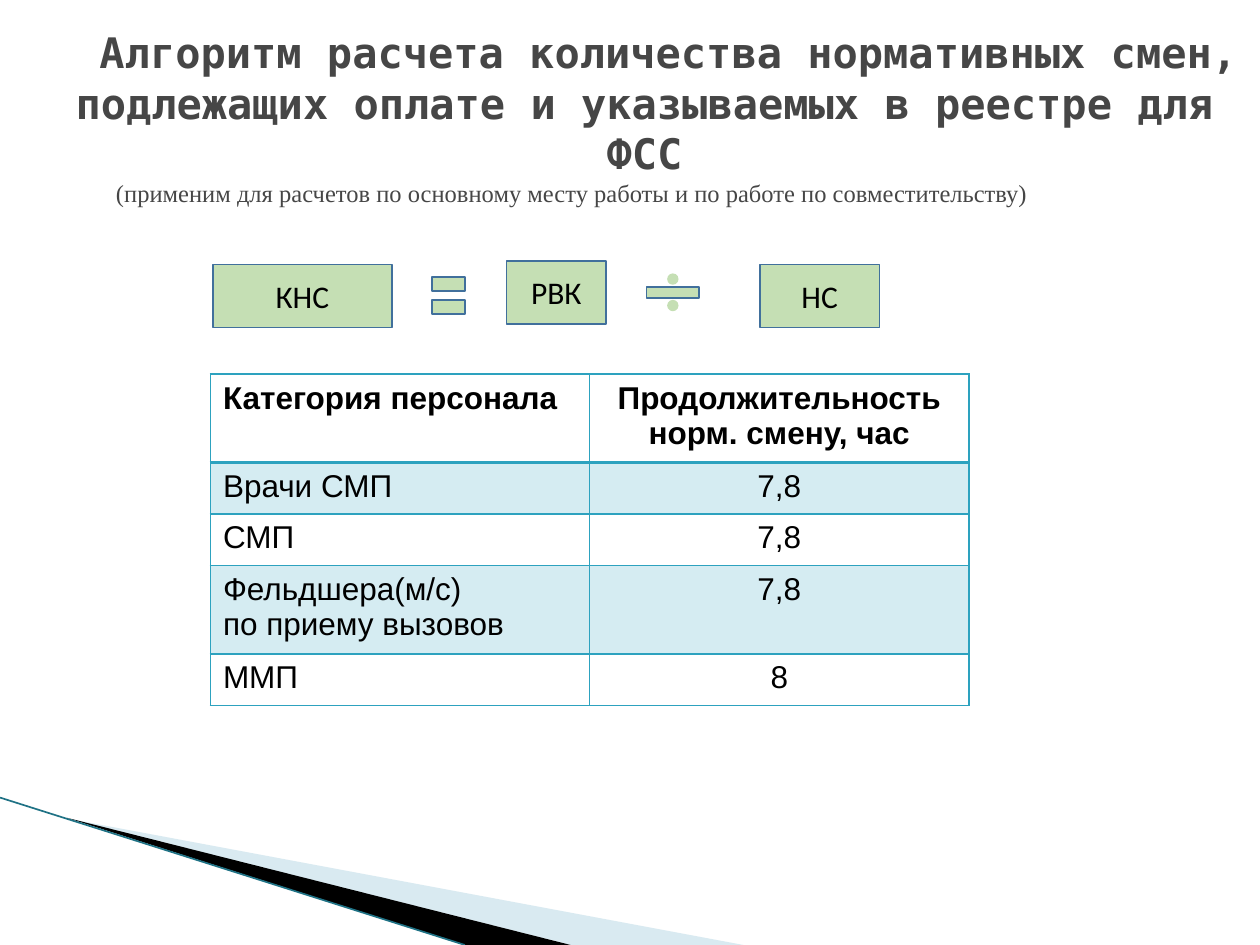
from lxml.etree import SubElement
from pptx import Presentation
from pptx.dml.color import RGBColor
from pptx.enum.shapes import MSO_CONNECTOR, MSO_SHAPE as SHAPE
from pptx.enum.text import MSO_ANCHOR as ANCHOR, MSO_AUTO_SIZE, PP_ALIGN as ALIGN
from pptx.oxml.ns import qn
from pptx.util import Inches, Pt

GREEN, BLUE, TEAL = "C5DFB4", "41709C", "2DA2BF"


def rgb(value):
    """Turn a hex string into a colour."""
    return RGBColor.from_string(value)


def paint(part, properties, color, opacity=100):
    """Fill a shape or cell with a colour of the given opacity in percent."""
    part.fill.solid()
    part.fill.fore_color.rgb = rgb(color)
    if opacity < 100:
        tint = properties.find(qn("a:solidFill")).find(qn("a:srgbClr"))
        SubElement(tint, qn("a:alpha"), val=str(opacity * 1000))


def style(paragraph, font, size, color="000000", bold=False, align=ALIGN.LEFT):
    """Format a paragraph and its runs."""
    paragraph.alignment = align
    for run in paragraph.runs:
        run.font.name, run.font.size, run.font.bold = font, Pt(size), bold
        run.font.color.rgb = rgb(color)


def indent(paragraph, left, first):
    """Set the left margin and first-line indent in inches."""
    properties = paragraph._p.get_or_add_pPr()
    properties.set("marL", str(Inches(left)))
    properties.set("indent", str(Inches(first)))


def add_block(slide, kind, left, top, width, height, outlined=True):
    """Add a green preset shape with an optional outline."""
    block = slide.shapes.add_shape(
        kind, Inches(left), Inches(top), Inches(width), Inches(height))
    block.shadow.inherit = False
    paint(block, block._element.spPr, GREEN)
    if outlined:
        block.line.color.rgb = rgb(BLUE)
        block.line.width = Pt(0.96)
    else:
        block.line.fill.background()
    return block


def add_term(slide, label, left, top, width, height):
    """Add a labelled term of the formula."""
    frame = add_block(slide, SHAPE.RECTANGLE, left, top, width, height).text_frame
    frame.margin_left = frame.margin_right = frame.margin_top = frame.margin_bottom = 0
    frame.vertical_anchor = ANCHOR.MIDDLE
    frame.text = label
    style(frame.paragraphs[0], "Calibri", 18, align=ALIGN.CENTER)


def add_equals(slide, left, top, width, height):
    """Add an equals sign made of two bars."""
    bar = 0.11
    for bar_top in (top, top + height - bar):
        add_block(slide, SHAPE.RECTANGLE, left, bar_top, width, bar)


def add_divide(slide, left, top, width, height):
    """Add a division sign made of two dots and a bar."""
    unit = 0.09
    for dot_top in (top, top + height - unit):
        add_block(slide, SHAPE.OVAL, left + (width - unit) / 2, dot_top, unit, unit, False)
    add_block(slide, SHAPE.RECTANGLE, left, top + (height - unit) / 2, width, unit)


def add_formula(slide, left, top):
    """Add the formula for the number of standard shifts."""
    add_term(slide, "КНС", left, top + 0.03, 1.42, 0.5)
    add_equals(slide, left + 1.74, top + 0.13, 0.26, 0.29)
    add_term(slide, "РВК", left + 2.33, top, 0.79, 0.5)
    add_divide(slide, left + 3.44, top + 0.1, 0.42, 0.3)
    add_term(slide, "НС", left + 4.34, top + 0.03, 0.95, 0.5)


def add_heading(slide, left, top, width, height):
    """Place the title with its explanatory line."""
    title = slide.shapes.title
    title.left, title.top = Inches(left), Inches(top)
    title.width, title.height = Inches(width), Inches(height)
    frame = title.text_frame
    frame.text = (
        "Алгоритм расчета количества нормативных смен, подлежащих оплате "
        "и указываемых в реестре для ФСС\n"
        "(применим для расчетов по основному месту работы и по работе по совместительству)")
    frame.auto_size = MSO_AUTO_SIZE.NONE
    frame.word_wrap = True
    frame.vertical_anchor = ANCHOR.MIDDLE
    frame.margin_left = frame.margin_right = frame.margin_top = frame.margin_bottom = 0
    heading, scope = frame.paragraphs
    indent(heading, 0.06, 0.38)
    style(heading, "DejaVu Sans Mono", 24, "464646", True, ALIGN.CENTER)
    indent(scope, 0.64, 0)
    style(scope, "Times New Roman", 14, "464646")


def add_borders(cell, bottom_width):
    """Draw the four borders of a cell."""
    properties = cell._tc.get_or_add_tcPr()
    for side, width in (("L", 1), ("R", 1), ("T", 1), ("B", bottom_width)):
        border = SubElement(properties, qn(f"a:ln{side}"), w=str(Pt(width)))
        SubElement(SubElement(border, qn("a:solidFill")), qn("a:srgbClr"), val=TEAL)


def add_shift_table(slide, left, top, width):
    """Add the table of standard shift lengths by staff category."""
    shifts = [
        ("Категория персонала", "Продолжительность норм. смену, час"),
        ("Врачи СМП", "7,8"),
        ("СМП", "7,8"),
        ("Фельдшера(м/с)\nпо приему вызовов", "7,8"),
        ("ММП", "8"),
    ]
    heights = [0.7, 0.41, 0.41, 0.7, 0.41]
    table = slide.shapes.add_table(
        len(shifts), 2, Inches(left), Inches(top),
        Inches(width), Inches(sum(heights))).table
    table.first_row = table.horz_banding = False
    for row, (texts, height) in enumerate(zip(shifts, heights)):
        table.rows[row].height = Inches(height)
        for column, text in enumerate(texts):
            cell = table.cell(row, column)
            cell.text = text
            add_borders(cell, 2 if row == 0 else 1)
            if row % 2:
                paint(cell, cell._tc.get_or_add_tcPr(), TEAL, 20)
            else:
                cell.fill.background()
            for paragraph in cell.text_frame.paragraphs:
                style(paragraph, "Arial", 18, bold=row == 0,
                      align=ALIGN.CENTER if column else ALIGN.LEFT)


def add_corner(slide, left, top, height):
    """Add the wedges and edge line in the lower left corner."""
    bottom = top + height
    wedges = [
        ("A0CBDC", 40, [(0.55, 0.17), (5.9, height), (4.53, height)]),
        ("000000", 100, [(0.53, 0.16), (4.53, height), (3.69, height)]),
    ]
    for color, opacity, corners in wedges:
        points = [(Inches(left + x), Inches(top + y)) for x, y in corners]
        builder = slide.shapes.build_freeform(*points[0])
        builder.add_line_segments(points[1:], close=True)
        wedge = builder.convert_to_shape()
        wedge.shadow.inherit = False
        paint(wedge, wedge._element.spPr, color, opacity)
        wedge.line.fill.background()
    edge = slide.shapes.add_connector(
        MSO_CONNECTOR.STRAIGHT, Inches(left), Inches(top),
        Inches(left + 3.69), Inches(bottom))
    edge.line.color.rgb = rgb("1F7285")
    edge.line.width = Pt(0.95)
    SubElement(edge._element.spPr, qn("a:effectLst"))


def main():
    """Build and save the slide."""
    deck = Presentation()
    deck.slide_width, deck.slide_height = Inches(10), Inches(7.5)
    slide = deck.slides.add_slide(deck.slide_layouts[5])
    add_corner(slide, 0, 6.33, 1.17)
    add_heading(slide, 0.28, 0.4, 9.61, 1.06)
    add_formula(slide, 1.69, 2.07)
    add_shift_table(slide, 1.67, 2.97, 6.02)
    deck.save("out.pptx")


if __name__ == "__main__":
    main()
